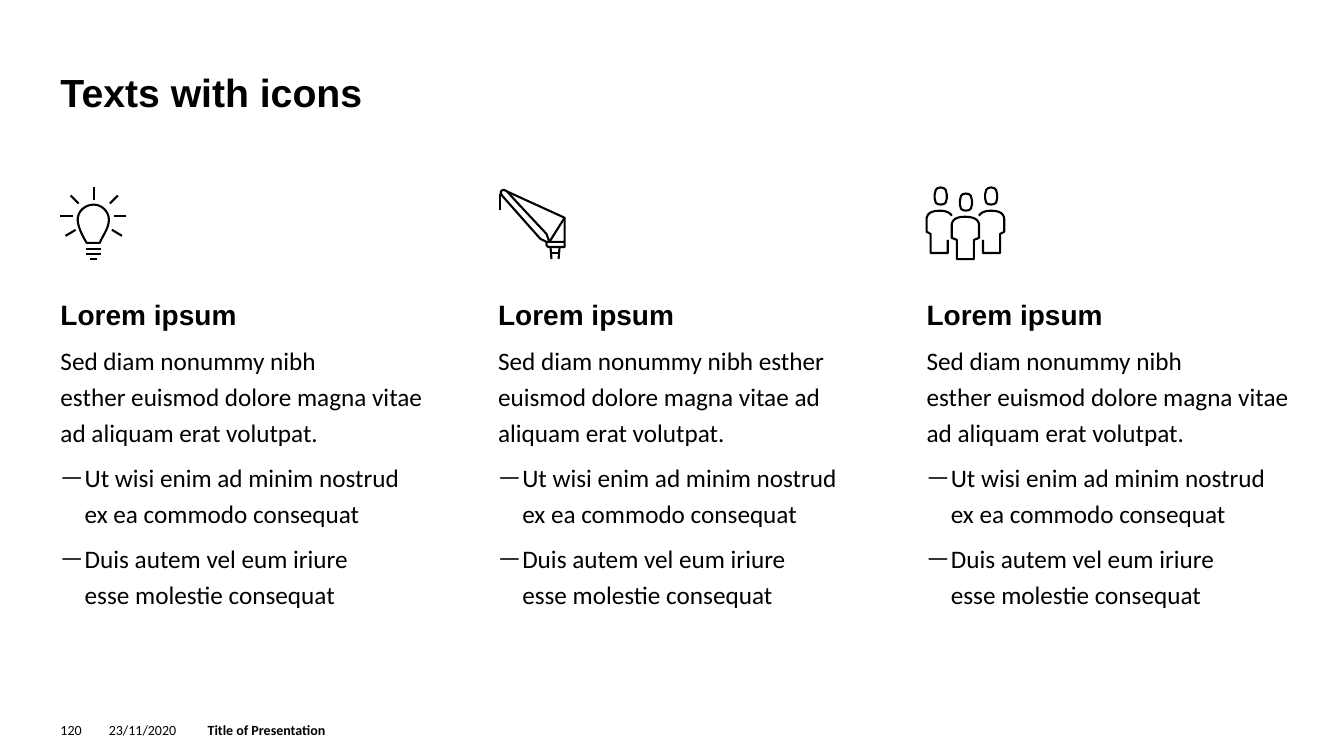
"""Build a slide with three icon columns of text."""
from lxml.etree import Element, SubElement
from pptx import Presentation
from pptx.dml.color import RGBColor
from pptx.enum.shapes import MSO_CONNECTOR as Connector
from pptx.enum.text import MSO_ANCHOR as Anchor, MSO_AUTO_SIZE as AutoSize, PP_ALIGN as Align
from pptx.oxml.ns import qn
from pptx.util import Emu, Pt

PX = 9144
BLACK = "000000"
BULLET_INDENT = 24

BULB = [(86, 241), (86, 241, 77, 227, 77, 218), (77, 210, 84, 203, 93, 203),
        (101, 203, 108, 210, 108, 218), (108, 227, 101, 235, 99, 241), (86, 241)]
BULB_LINES = [(93, 198, 93, 186), (72, 214, 60, 214), (125, 214, 113, 214),
              (78, 202, 70, 194), (117, 194, 109, 202), (121, 234, 111, 228),
              (75, 228, 65, 234), (85, 247, 100, 247), (85, 252, 100, 252),
              (89, 257, 96, 257)]

CRANE_ARM = [(542, 240), (536, 237), (536, 237, 504, 201, 498, 194),
             (494, 190, 499, 186, 503, 190), (510, 198, 542, 232, 542, 232), (545, 240)]
CRANE_CABIN = [(560, 240), (542, 240), (542, 241), (542, 243, 542, 245, 544, 245),
               (560, 245), (560, 216), (503, 190)]
CRANE_STRUT = [(560, 216), (545, 240)]
CRANE_LINES = [(496, 208, 496, 192), (546, 245, 547, 257), (547, 251, 554, 251),
               (554, 257, 555, 245)]

HEAD = [(0, 11), (0, 7), (0, 4, 1, 0, 6, 0), (11, 0, 12, 4, 12, 7), (12, 11),
        (12, 14, 11, 17, 6, 17), (1, 17, 0, 14, 0, 11)]
HEAD_PLACES = [(952, 192), (927, 186), (977, 186)]
FRONT_BODY = [(949, 238), (944, 236), (944, 223), (944, 222, 944, 215, 957, 215),
              (971, 215, 971, 222, 971, 223), (971, 236), (966, 238), (966, 257),
              (949, 257), (949, 238)]
SIDE_BODY = [(940, 238), (940, 251), (923, 251), (923, 232), (919, 230), (919, 217),
             (919, 216, 919, 209, 932, 209), (940, 209, 943, 212, 944, 214)]
MIRROR_SUM = 1915

BROKEN_INTRO = "Sed diam nonummy nibh\nesther euismod dolore magna vitae ad aliquam erat volutpat."
FLOWING_INTRO = "Sed diam nonummy nibh esther euismod dolore magna vitae ad aliquam erat volutpat."
POINTS = ["Ut wisi enim ad minim nostrud ex ea commodo consequat",
          "Duis autem vel eum iriure\nesse molestie consequat"]
COLUMNS = [(60, 362, BROKEN_INTRO), (494, 354, FLOWING_INTRO), (919, 362, BROKEN_INTRO)]
FOOTERS = [(60, 31, "120", False), (108, 87, "23/11/2020", False),
           (206, 843, "Title of Presentation", True)]


def px(length):
    """Turn px into EMU."""
    return Emu(round(length * PX))


def color(hex_string):
    """Turn a hex string into a colour."""
    return RGBColor.from_string(hex_string)


def format_runs(paragraph, font_name, size, bold=False):
    """Set the font of every run in a paragraph."""
    for run in paragraph.runs:
        run.font.name = font_name
        run.font.size = Pt(size)
        run.font.bold = bold
        run.font.color.rgb = color(BLACK)


def prepare_frame(frame, anchor=Anchor.TOP):
    """Remove the margins of a text frame and let it wrap."""
    frame.margin_left = frame.margin_right = frame.margin_top = frame.margin_bottom = 0
    frame.word_wrap = True
    frame.auto_size = AutoSize.NONE
    frame.vertical_anchor = anchor


def add_title(slide, wording):
    """Place and format the slide title."""
    title = slide.shapes.title
    title.left, title.top, title.width, title.height = px(60), px(68), px(1221), px(47)
    prepare_frame(title.text_frame)
    title.text_frame.text = wording
    heading = title.text_frame.paragraphs[0]
    heading.alignment = Align.LEFT
    format_runs(heading, "Arial", 28, True)


def add_footer(slide, left, width, wording, bold):
    """Add one part of the footer line."""
    frame = slide.shapes.add_textbox(px(left), px(716), px(width), px(16)).text_frame
    prepare_frame(frame, Anchor.MIDDLE)
    frame.text = wording
    format_runs(frame.paragraphs[0], "Calibri", 10, bold)


def add_dash(paragraph):
    """Give a paragraph a hanging dash bullet."""
    properties = paragraph._p.get_or_add_pPr()
    properties.set("marL", str(px(BULLET_INDENT)))
    properties.set("indent", str(-px(BULLET_INDENT)))
    SubElement(properties, qn("a:buFont")).set("typeface", "Calibri")
    SubElement(properties, qn("a:buChar")).set("char", "—")


def add_column(slide, left, width, intro):
    """Add a heading, an introduction and two dashed points."""
    frame = slide.shapes.add_textbox(px(left), px(288), px(width), px(378)).text_frame
    prepare_frame(frame)
    heading = frame.paragraphs[0]
    heading.text = "Lorem ipsum"
    heading.line_spacing = 1.2
    format_runs(heading, "Arial", 20, True)
    for wording in [intro, *POINTS]:
        paragraph = frame.add_paragraph()
        paragraph.text = wording
        if wording in POINTS:
            add_dash(paragraph)
        paragraph.line_spacing = 1.2
        paragraph.space_before = Pt(6)
        format_runs(paragraph, "Calibri", 18)


def draw_line(icon, x1, y1, x2, y2):
    """Draw one straight stroke of an icon."""
    stroke = icon.shapes.add_connector(Connector.STRAIGHT, px(x1), px(y1), px(x2), px(y2))
    stroke.line.color.rgb = color(BLACK)
    stroke.line.width = Pt(1.5)
    SubElement(stroke._element.spPr, qn("a:effectLst"))


def shift(part, left, top):
    """Move every point of an outline part."""
    return tuple(value + (top if index % 2 else left) for index, value in enumerate(part))


def mirror(part):
    """Mirror every point of an outline part across the middle person."""
    return tuple(value if index % 2 else MIRROR_SUM - value for index, value in enumerate(part))


def bend(segment, part, left, top):
    """Replace a straight segment by a cubic curve."""
    curve = Element(qn("a:cubicBezTo"))
    values = shift(part, -left, -top)
    for x, y in zip(values[::2], values[1::2]):
        point = SubElement(curve, qn("a:pt"))
        point.set("x", str(px(x)))
        point.set("y", str(px(y)))
    segment.getparent().replace(segment, curve)


def draw_outline(icon, *contours):
    """Draw unfilled contours of corners and cubic curves as one shape."""
    ends = [[part[-2:] for part in contour] for contour in contours]
    left, top = (min(end[axis] for row in ends for end in row) for axis in (0, 1))
    builder = icon.shapes.build_freeform(*map(px, ends[0][0]))
    for number, row in enumerate(ends):
        corners = [(px(x), px(y)) for x, y in row]
        if number:
            builder.move_to(*corners[0])
        builder.add_line_segments(corners[1:], close=corners[0] == corners[-1])
    outline = builder.convert_to_shape()
    segments = list(outline._element.iter(qn("a:lnTo")))
    parts = [part for contour in contours for part in contour[1:]]
    for segment, part in zip(segments, parts):
        if len(part) == 6:
            bend(segment, part, left, top)
    outline.shadow.inherit = False
    outline.fill.background()
    outline.line.color.rgb = color(BLACK)
    outline.line.width = Pt(1.5)


def add_icon(slide, outlines, strokes=()):
    """Group outlines and strokes into one icon."""
    icon = slide.shapes.add_group_shape()
    for contours in outlines:
        draw_outline(icon, *contours)
    for stroke in strokes:
        draw_line(icon, *stroke)


def people_outlines():
    """Return the outlines of three people."""
    bodies = [FRONT_BODY, SIDE_BODY, [mirror(part) for part in SIDE_BODY]]
    heads = [[shift(part, *place) for part in HEAD] for place in HEAD_PLACES]
    return [[contour] for contour in bodies + heads]


def main():
    """Build and save the slide."""
    presentation = Presentation()
    presentation.slide_width, presentation.slide_height = px(1333), px(750)
    slide = presentation.slides.add_slide(presentation.slide_layouts[5])
    add_title(slide, "Texts with icons")
    for footer in FOOTERS:
        add_footer(slide, *footer)
    add_icon(slide, people_outlines())
    add_icon(slide, [[BULB]], BULB_LINES)
    add_icon(slide, [[CRANE_ARM], [CRANE_CABIN, CRANE_STRUT]], CRANE_LINES)
    for column in COLUMNS:
        add_column(slide, *column)
    presentation.save("out.pptx")


if __name__ == "__main__":
    main()
